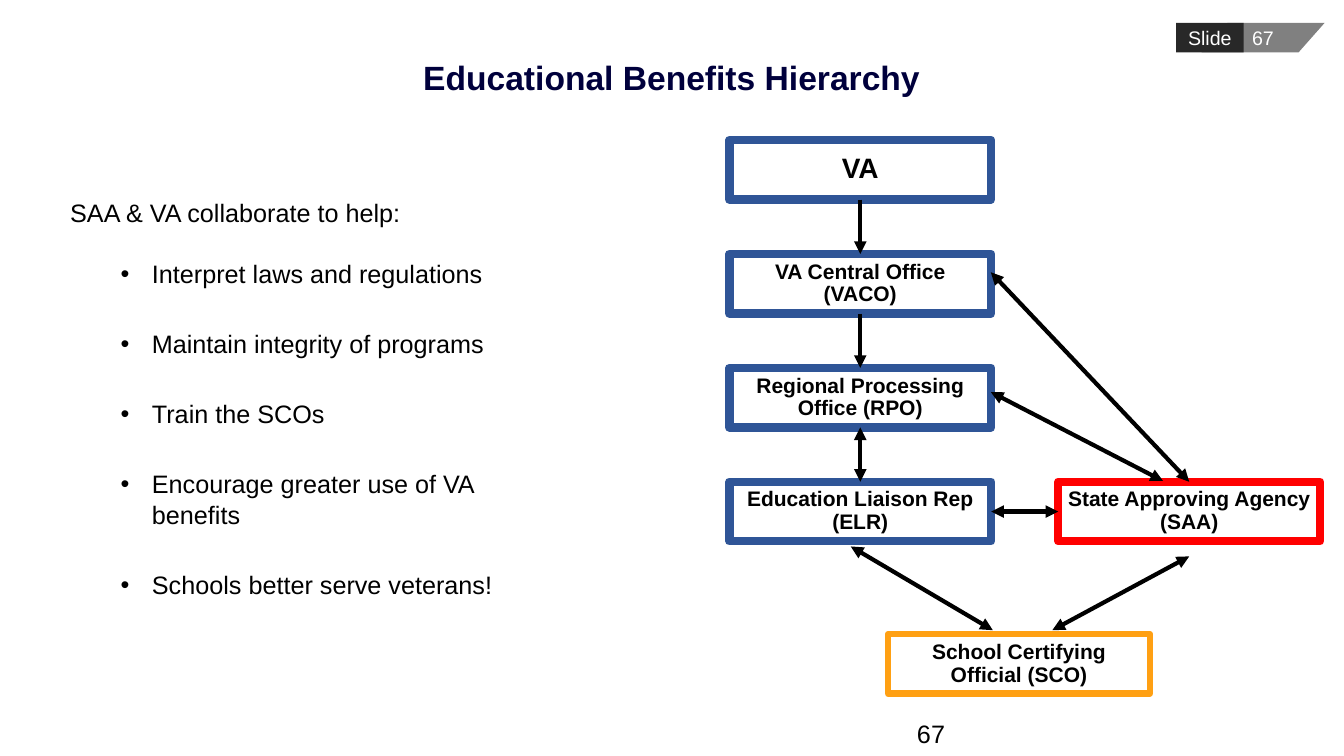
from dataclasses import dataclass

from lxml.etree import SubElement
from pptx import Presentation
from pptx.dml.color import RGBColor as RGB
from pptx.enum.shapes import MSO_CONNECTOR as LINK, MSO_SHAPE as FORM
from pptx.enum.text import MSO_ANCHOR as ANCHOR, PP_ALIGN as ALIGN
from pptx.oxml.ns import qn
from pptx.util import Cm, Pt


@dataclass(frozen=True)
class Theme:
    font: str = "Arial"
    black: str = "000000"
    white: str = "FFFFFF"
    navy: str = "00003C"
    blue: str = "2F5597"
    red: str = "FF0000"
    amber: str = "FFA013"
    gray: str = "808080"
    dark: str = "282828"
    title: int = 24
    head: int = 20
    body: int = 18
    label: int = 15
    tag: int = 14


T = Theme()

TITLE = "Educational Benefits Hierarchy"
PAGE = "67"
INTRO = "SAA & VA collaborate to help:"
GOALS = [
    "Interpret laws and regulations",
    "Maintain integrity of programs",
    "Train the SCOs",
    "Encourage greater use of VA benefits",
    "Schools better serve veterans!",
]

# Boxes: all lengths in centimetres
WIDE, HIGH = 6.6, 1.5
LEFT, TOP, STEP = 18.38, 3.53, 2.87
CHAIN = [
    ("VA", "VA", T.head),
    ("VACO", "VA Central Office\v(VACO)", T.label),
    ("RPO", "Regional Processing Office (RPO)", T.label),
    ("ELR", "Education Liaison Rep\v(ELR)", T.label),
]
NODES = [
    (name, text, LEFT, TOP + i * STEP, T.blue, 6, size)
    for i, (name, text, size) in enumerate(CHAIN)
] + [
    ("SAA", "State Approving Agency\v(SAA)", 26.67, TOP + 3 * STEP, T.red, 6, T.label),
    ("SCO", "School Certifying Official (SCO)", 22.38, 15.98, T.amber, 4.5, T.label),
]

# Each end is a (box, side) joint or a free (x, y) point; the flag adds a head at the start
ARROWS = [
    (("VA", 2), ("VACO", 0), False),
    (("VACO", 2), ("RPO", 0), False),
    (("RPO", 2), ("ELR", 0), True),
    ((24.97, 6.86), ("SAA", 0), True),
    ((24.97, 9.88), (29.31, 12.12), True),
    (("ELR", 3), ("SAA", 1), True),
    ((26.52, 15.88), (29.97, 14.02), True),
    ((21.44, 13.77), (25.02, 15.88), True),
]

deck = Presentation()
deck.slide_width, deck.slide_height = Cm(33.87), Cm(19.05)
slide = deck.slides.add_slide(deck.slide_layouts[6])
shapes = slide.shapes


def style(para, size, color=T.black, bold=False, align=ALIGN.LEFT):
    para.alignment = align
    font = para.font
    font.name, font.size, font.bold = T.font, Pt(size), bold
    font.color.rgb = RGB.from_string(color)


def note(text, area, size, color=T.black, bold=False, align=ALIGN.LEFT):
    frame = shapes.add_textbox(*map(Cm, area)).text_frame
    frame.word_wrap = True
    frame.text = text
    style(frame.paragraphs[0], size, color, bold, align)
    return frame


def block(form, area, text, size, color, bold=False):
    """Add a plain shape with centred text and no fill or line."""
    shape = shapes.add_shape(form, *map(Cm, area))
    shape.shadow.inherit = False
    shape.fill.background()
    shape.line.fill.background()
    frame = shape.text_frame
    frame.vertical_anchor = ANCHOR.MIDDLE
    frame.text = text
    style(frame.paragraphs[0], size, color, bold, ALIGN.CENTER)
    return shape


def tag(form, area, text, fill):
    shape = block(form, area, text, T.tag, T.white)
    shape.fill.solid()
    shape.fill.fore_color.rgb = RGB.from_string(fill)
    shape.text_frame.word_wrap = False
    return shape


def node(text, x, y, color, width, size):
    shape = block(FORM.RECTANGLE, (x, y, WIDE, HIGH), text, size, T.black, True)
    shape.line.color.rgb = RGB.from_string(color)
    shape.line.width = Pt(width)
    SubElement(shape.line._get_or_add_ln(), qn("a:round"))
    frame = shape.text_frame
    frame.margin_left = frame.margin_right = Cm(0.15)
    frame.margin_top = frame.margin_bottom = Cm(0.15)
    frame.paragraphs[0].line_spacing = 0.9
    return shape


def arrow(start, end, both):
    free = [(0, 0) if isinstance(p[0], str) else p for p in (start, end)]
    link = shapes.add_connector(LINK.STRAIGHT, *(Cm(v) for p in free for v in p))
    for point, join in ((start, link.begin_connect), (end, link.end_connect)):
        if isinstance(point[0], str):
            join(boxes[point[0]], point[1])
    link.line.color.rgb = RGB.from_string(T.black)
    link.line.width = Pt(3)
    ln = link.line._get_or_add_ln()
    for side in ("headEnd", "tailEnd") if both else ("tailEnd",):
        SubElement(ln, qn("a:" + side), type="triangle")
    SubElement(link._element.spPr, qn("a:effectLst"))


def goal(frame, text, gap):
    para = frame.add_paragraph()
    para.text = text
    props = para._p.get_or_add_pPr()
    props.set("marL", str(Cm(2.06)))
    props.set("indent", str(Cm(-0.79)))
    para.space_before = Pt(gap)
    SubElement(props, qn("a:buFont"), typeface=T.font)
    SubElement(props, qn("a:buChar"), char="•")
    style(para, T.body)


slant = tag(FORM.PARALLELOGRAM, (30.28, 0.58, 3.1, 0.74), PAGE, T.gray)
slant.adjustments[0] = 0.883
tag(FORM.RECTANGLE, (29.64, 0.58, 1.7, 0.74), "Slide", T.dark)

head = note(TITLE, (1.52, 1.57, 30.81, 0.89), T.title, T.navy, True, ALIGN.CENTER)
head.vertical_anchor = ANCHOR.MIDDLE
head.paragraphs[0].line_spacing = 0.9
note(PAGE, (22.86, 17.98, 2.11, 0.69), T.body)

boxes = {name: node(*rest) for name, *rest in NODES}
for ends in ARROWS:
    arrow(*ends)

body = note(INTRO, (1.52, 4.85, 12.24, 10.34), T.body)
for i, text in enumerate(GOALS):
    goal(body, text, 28.5 if i else 22)

deck.save("out.pptx")
